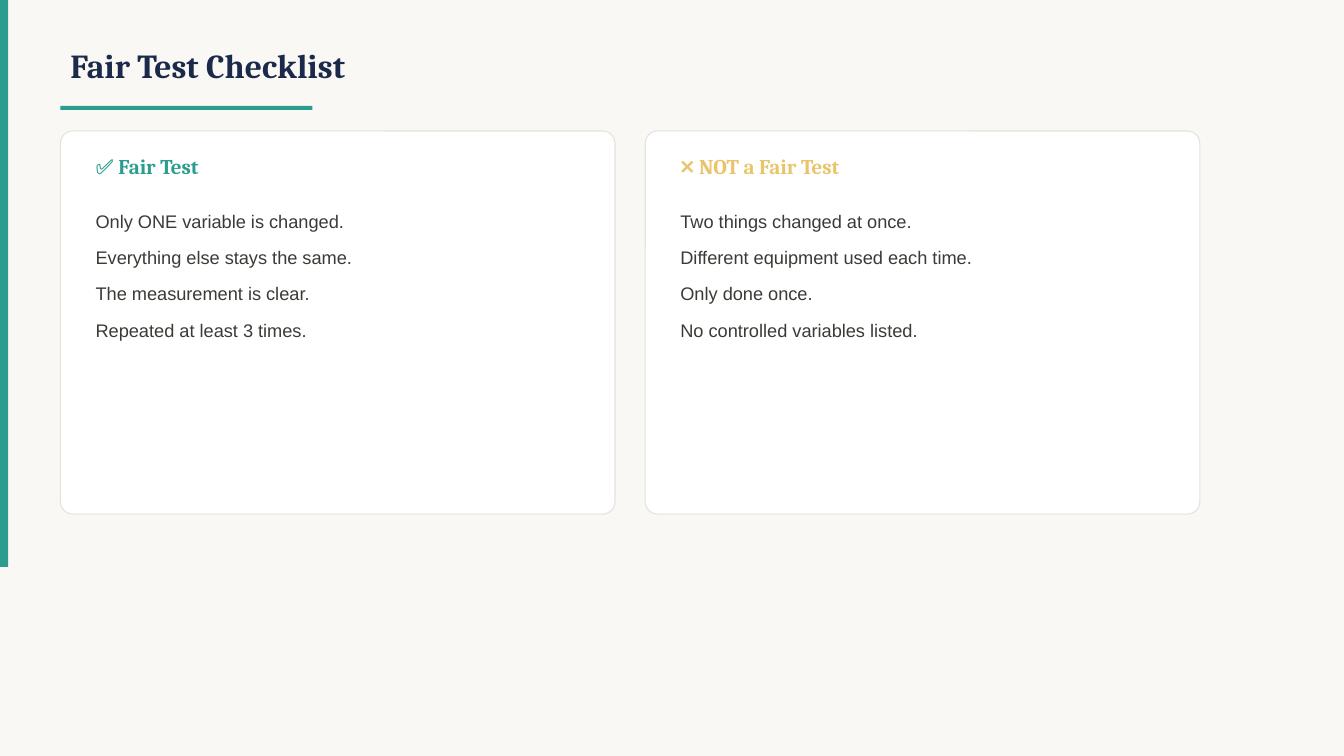
from pptx import Presentation
from pptx.dml.color import RGBColor
from pptx.enum.shapes import MSO_SHAPE as Shape
from pptx.enum.text import MSO_ANCHOR as Anchor
from pptx.util import Inches, Pt

TEAL = RGBColor(0x2A, 0x9D, 0x8F)
GOLD = RGBColor(0xE9, 0xC4, 0x6A)
NAVY = RGBColor(0x1B, 0x2A, 0x4A)
INK = RGBColor(0x3D, 0x3A, 0x36)
CREAM = RGBColor(0xFA, 0xF8, 0xF5)
WHITE = RGBColor(0xFF, 0xFF, 0xFF)
BORDER = RGBColor(0xE5, 0xE2, 0xDC)

CELL = 0.1  # side of a grid cell, in inches
HEADING_FONT = "Cambria"
BODY_FONT = "Arial"


def grid(*cells):
    """Turn columns and rows into lengths."""
    return [Inches(cell * CELL) for cell in cells]


def write(paragraph, text, *, font=BODY_FONT, size=13, color=INK, bold=False,
          line_spacing=None, space_after=None):
    paragraph.line_spacing = line_spacing
    if space_after is not None:
        paragraph.space_after = Pt(space_after)
    run = paragraph.add_run()
    run.text = text
    run.font.name = font
    run.font.size = Pt(size)
    run.font.bold = bold
    run.font.color.rgb = color


class ChecklistSlide:
    def __init__(self, presentation):
        self.slide = presentation.slides.add_slide(presentation.slide_layouts[6])
        background = self.slide.background.fill
        background.solid()
        background.fore_color.rgb = CREAM

    def box(self, kind, column, row, width, height, fill):
        shape = self.slide.shapes.add_shape(kind, *grid(column, row, width, height))
        shape.shadow.inherit = False
        shape.fill.solid()
        shape.fill.fore_color.rgb = fill
        shape.line.fill.background()
        return shape

    def text(self, lines, column, row, width, height, anchor=Anchor.TOP, **style):
        frame = self.slide.shapes.add_textbox(
            *grid(column, row, width, height)).text_frame
        frame.word_wrap = True
        frame.vertical_anchor = anchor
        for index, line in enumerate(lines):
            paragraph = frame.add_paragraph() if index else frame.paragraphs[0]
            write(paragraph, line, **style)

    def heading(self, text, column, row, width, height, size, color):
        self.text([text], column, row, width, height, Anchor.MIDDLE,
                  font=HEADING_FONT, size=size, color=color, bold=True)

    def card(self, column, row, heading, color, points):
        panel = self.box(Shape.ROUNDED_RECTANGLE, column, row, 55, 38, WHITE)
        panel.adjustments[0] = 0.032
        panel.line.color.rgb = BORDER
        panel.line.width = Pt(0.75)
        self.heading(heading, column + 2.5, row + 1.5, 50, 4, 15, color)
        self.text(points, column + 2.5, row + 6.5, 50, 29,
                  line_spacing=1.4, space_after=4)


def main():
    presentation = Presentation()
    presentation.slide_width = Inches(13.33)
    presentation.slide_height = Inches(7.5)
    checklist = ChecklistSlide(presentation)

    # Side bar, title and underline
    checklist.box(Shape.RECTANGLE, 0, 0, 0.8, 56.25, TEAL)
    checklist.heading("Fair Test Checklist", 6, 3, 100, 7, 24, NAVY)
    checklist.box(Shape.RECTANGLE, 6, 10.5, 25, 0.4, TEAL)

    # Two cards side by side
    cards = [
        ("✅ Fair Test", TEAL, [
            "Only ONE variable is changed.",
            "Everything else stays the same.",
            "The measurement is clear.",
            "Repeated at least 3 times.",
        ]),
        ("❌ NOT a Fair Test", GOLD, [
            "Two things changed at once.",
            "Different equipment used each time.",
            "Only done once.",
            "No controlled variables listed.",
        ]),
    ]
    for index, (heading, color, points) in enumerate(cards):
        checklist.card(6 + 58 * index, 13, heading, color, points)

    presentation.save("out.pptx")


if __name__ == "__main__":
    main()
